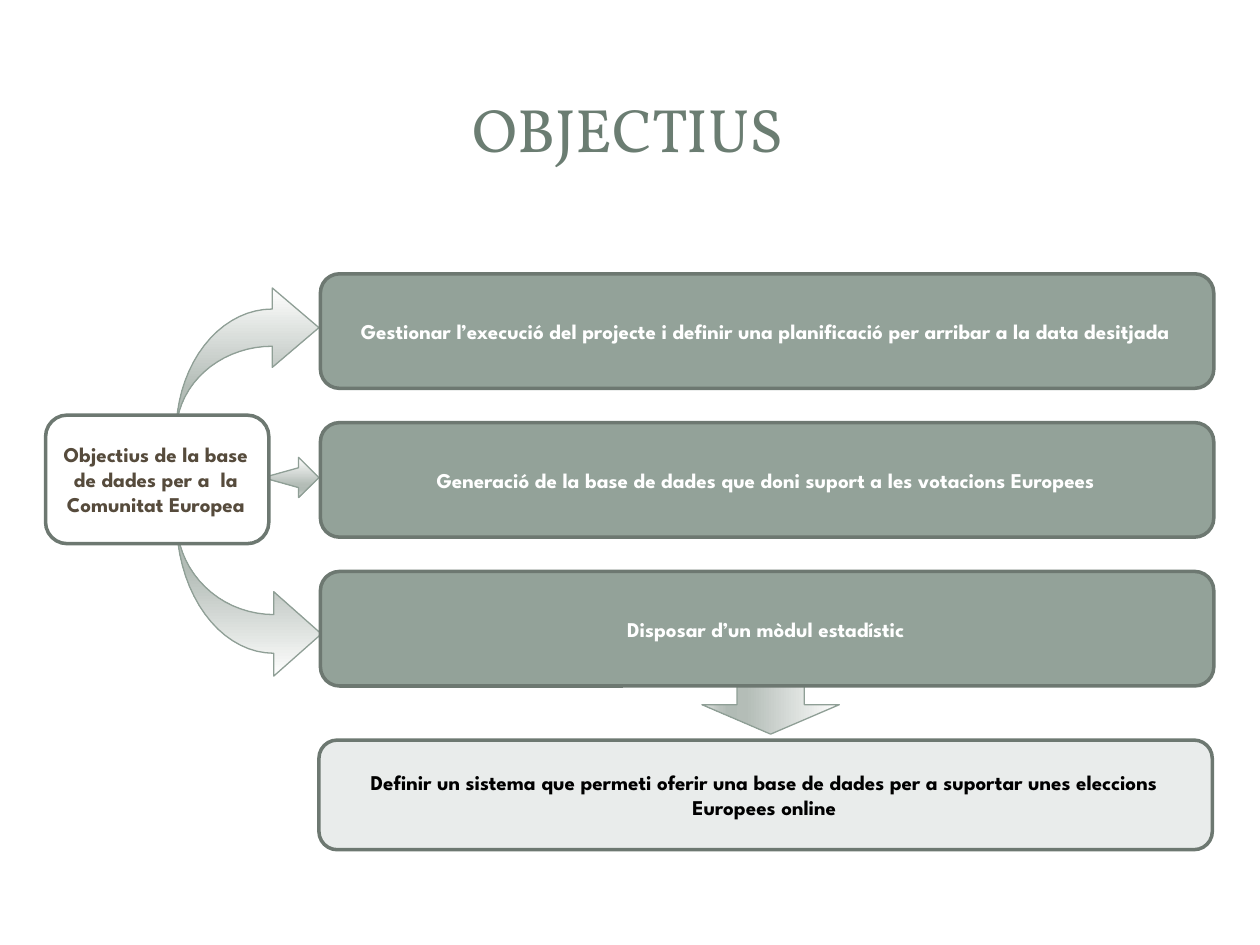
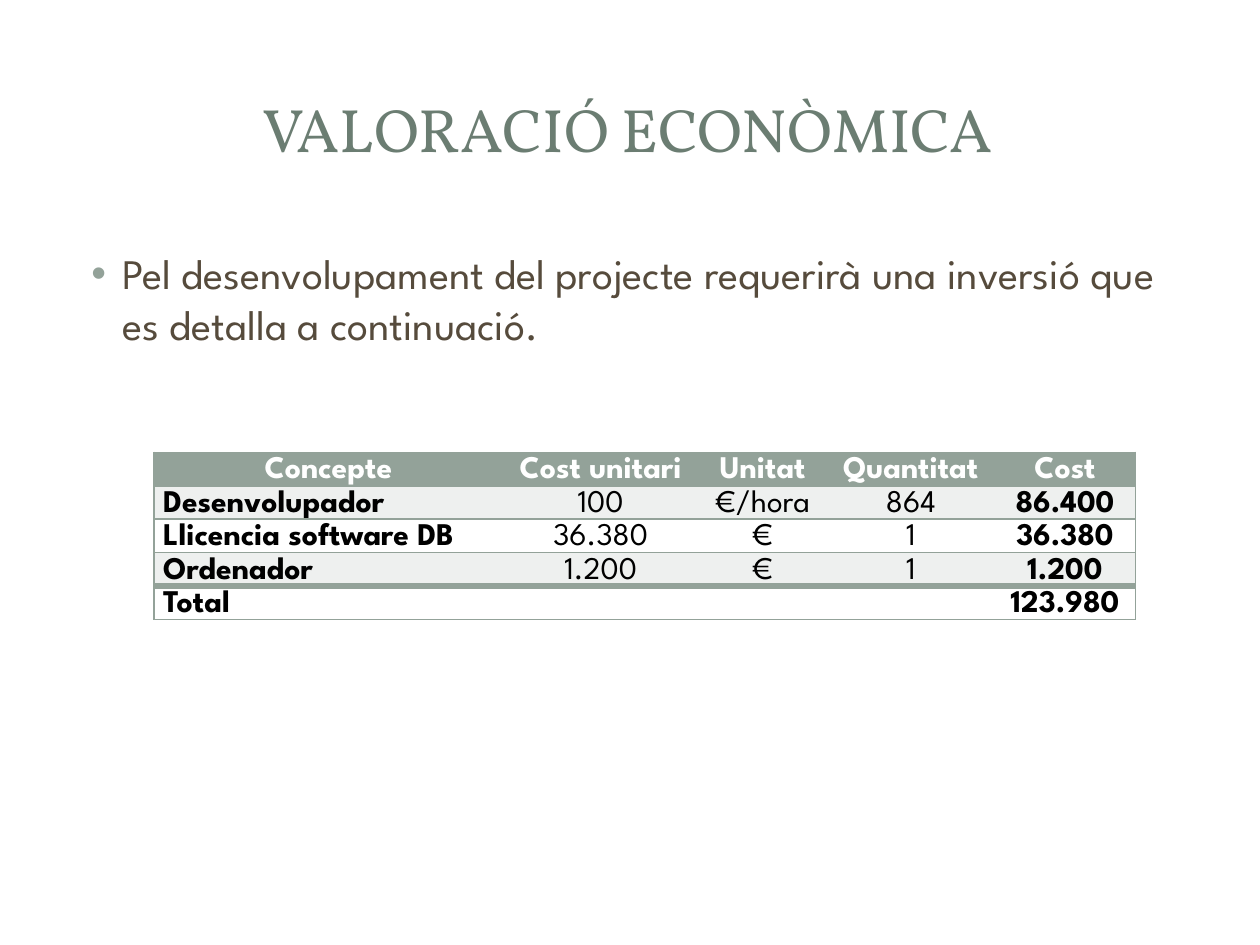
"""Build two slides: the goals of the project and its cost estimate."""
from dataclasses import dataclass
from math import cos, pi, sin

from lxml import etree
from pptx import Presentation
from pptx.dml.color import RGBColor
from pptx.enum.shapes import MSO_SHAPE
from pptx.enum.text import MSO_ANCHOR, PP_ALIGN
from pptx.oxml.ns import qn
from pptx.util import Cm, Pt

ROUNDED = MSO_SHAPE.ROUNDED_RECTANGLE
RECTANGLE = MSO_SHAPE.RECTANGLE
RIGHT_ARROW = MSO_SHAPE.RIGHT_ARROW
MIDDLE = MSO_ANCHOR.MIDDLE
CENTER = PP_ALIGN.CENTER
LEFT = PP_ALIGN.LEFT
JUSTIFY = PP_ALIGN.JUSTIFY

WHITE = RGBColor(0xFF, 0xFF, 0xFF)
BLACK = RGBColor(0x00, 0x00, 0x00)
SAGE = RGBColor(0x93, 0xA2, 0x99)
SAGE_EDGE = RGBColor(0x6D, 0x78, 0x71)
SAGE_PALE = RGBColor(0xE9, 0xEC, 0xEB)
SAGE_BAND = RGBColor(0xEE, 0xF0, 0xEF)
ARROW_EDGE = RGBColor(0x8F, 0x9F, 0x96)
TITLE_GREEN = RGBColor(0x6B, 0x7D, 0x72)
BROWN = RGBColor(0x56, 0x4B, 0x3C)
ARROW_STOPS = ((0, RGBColor(0xFE, 0xFE, 0xFE)), (68, RGBColor(0xB4, 0xBD, 0xB7)),
               (81, RGBColor(0xB1, 0xBB, 0xB5)), (86, RGBColor(0xB9, 0xC1, 0xBC)),
               (100, RGBColor(0xE1, 0xE4, 0xE2)))

TITLE_FONT, TEXT_FONT = "Vollkorn", "League Spartan"
TITLE_ONLY_LAYOUT, CONTENT_LAYOUT = 5, 1
ARC_STEPS = 18
Area = tuple[float, float, float, float]


@dataclass
class Panel:
    """A plain white background panel; area in centimetres, opacity in percent."""
    kind: int
    area: Area
    opacity: int


@dataclass
class Card:
    """A rounded box with bold text; area in centimetres."""
    text: str
    area: Area
    fill: RGBColor
    color: RGBColor


@dataclass
class CurvedArrow:
    """A quarter-turn arrow in centimetres; negative radii turn upwards."""
    start_x: float
    start_y: float
    neck_x: float
    tip_x: float
    outer: float
    inner: float
    head: float


PANELS = (Panel(ROUNDED, (0.25, 0.28, 24.89, 18.52), 100),
          Panel(RECTANGLE, (0.76, 0.76, 23.88, 3.68), 83),
          Panel(RECTANGLE, (1.04, 1.04, 23.29, 3.1), 100))
OBJECTIVES = (
    "Gestionar l’execució del projecte i definir una planificació per arribar a la data desitjada",
    "Generació de la base de dades que doni suport a les votacions Europees",
    "Disposar d’un mòdul estadístic",
)
CARDS = [
    Card("Objectius de la base de dades per a  la Comunitat Europea",
         (0.92, 8.37, 4.5, 2.59), WHITE, BROWN),
    Card("Definir un sistema que permeti oferir una base de dades per a suportar "
         "unes eleccions Europees online", (6.43, 14.92, 18.01, 2.21), SAGE_PALE, BLACK),
] + [Card(text, (6.46, 5.52 + 3 * index, 18.01, 2.31), SAGE, WHITE)
     for index, text in enumerate(OBJECTIVES)]

CURVED_ARROWS = (CurvedArrow(3.56, 10.48, 5.52, 6.48, 2.69, 1.91, 0.85),
                 CurvedArrow(3.55, 8.74, 5.49, 6.43, -2.51, -1.76, -0.8))
STRAIGHT_ARROW = ((5.41, 9.6), (6.02, 9.43), (6.02, 9.22), (6.43, 9.63),
                  (6.02, 10.03), (6.02, 9.83), (5.41, 9.66))

COSTS = (
    ("Concepte", "Cost unitari", "Unitat", "Quantitat", "Cost"),
    ("Desenvolupador", "100", "€/hora", "864", "86.400"),
    ("Llicencia software DB", "36.380", "€", "1", "36.380"),
    ("Ordenador", "1.200", "€", "1", "1.200"),
    ("Total", "", "", "", "123.980"),
)
ROW_FILLS = (SAGE, SAGE_BAND, WHITE, SAGE_BAND, WHITE)
COLUMN_WIDTHS = (7.04, 3.94, 2.59, 3.38, 2.84)
ROW_HEIGHT = 0.67


def place(shape, area: Area) -> None:
    """Move and size a shape in centimetres."""
    shape.left, shape.top, shape.width, shape.height = map(Cm, area)


def format_para(para, size: float, color: RGBColor, align, bold: bool = False,
                font: str = TEXT_FONT) -> None:
    """Format a paragraph and its runs."""
    para.alignment = align
    for span in para.runs:
        span.font.name = font
        span.font.size = Pt(size)
        span.font.bold = bold
        span.font.color.rgb = color


def add_box(page, kind: int, area: Area, fill: RGBColor):
    """Draw a flat filled shape without an outline."""
    box = page.shapes.add_shape(kind, *map(Cm, area))
    box.shadow.inherit = False
    box.fill.solid()
    box.fill.fore_color.rgb = fill
    box.line.fill.background()
    return box


def add_panels(page) -> None:
    """Draw the shared background panels behind everything else."""
    for depth, panel in enumerate(PANELS):
        box = add_box(page, panel.kind, panel.area, WHITE)
        if panel.kind == ROUNDED:
            box.adjustments[0] = 0.02
        if panel.opacity < 100:
            color = box._element.spPr.find(qn("a:solidFill"))[0]
            etree.SubElement(color, qn("a:alpha"), val=str(panel.opacity * 1000))
        page.shapes._spTree.insert(2 + depth, box._element)


def add_page(deck, layout: int, title: str):
    """Add a slide with the shared panels and title style."""
    page = deck.slides.add_slide(deck.slide_layouts[layout])
    add_panels(page)
    box = page.shapes.title
    place(box, (1.19, 1.14, 22.94, 2.9))
    box.text_frame.text = title
    box.text_frame.vertical_anchor = MIDDLE
    format_para(box.text_frame.paragraphs[0], 35, TITLE_GREEN, CENTER, font=TITLE_FONT)
    return page


def style_arrow(shape, angle: int) -> None:
    """Give an arrow its thin outline and gradient, angle clockwise in degrees."""
    shape.shadow.inherit = False
    shape.line.color.rgb = ARROW_EDGE
    shape.line.width = Pt(0.75)
    shape.fill.gradient()
    gradient = shape._element.spPr.find(qn("a:gradFill"))
    gradient.clear()
    stops = etree.SubElement(gradient, qn("a:gsLst"))
    for position, color in ARROW_STOPS:
        stop = etree.SubElement(stops, qn("a:gs"), pos=str(position * 1000))
        etree.SubElement(stop, qn("a:srgbClr"), val=str(color))
    etree.SubElement(gradient, qn("a:lin"), ang=str(angle * 60000), scaled="0")


def add_outline_arrow(page, points, angle: int) -> None:
    """Draw a closed arrow outline through points in centimetres."""
    corners = [(Cm(x), Cm(y)) for x, y in points]
    builder = page.shapes.build_freeform(*corners[0])
    builder.add_line_segments(corners[1:], close=True)
    style_arrow(builder.convert_to_shape(), angle)


def add_curved_arrow(page, arrow: CurvedArrow) -> None:
    """Draw a curved arrow between two quarter ellipses."""
    turns = [pi / 2 * step / ARC_STEPS for step in range(ARC_STEPS + 1)]
    reach_x = arrow.neck_x - arrow.start_x
    outer, inner = ([(arrow.neck_x - reach_x * cos(turn), arrow.start_y + radius * sin(turn))
                     for turn in turns] for radius in (arrow.outer, arrow.inner))
    tip_y = arrow.start_y + (arrow.outer + arrow.inner) / 2
    head = [(arrow.neck_x, tip_y + arrow.head), (arrow.tip_x, tip_y),
            (arrow.neck_x, tip_y - arrow.head)]
    add_outline_arrow(page, outer + head + inner[:0:-1], 90 if arrow.outer < 0 else 270)


def add_card(page, card: Card) -> None:
    """Draw a rounded box with centred bold text."""
    box = add_box(page, ROUNDED, card.area, card.fill)
    box.line.color.rgb = SAGE_EDGE
    box.line.width = Pt(2)
    frame = box.text_frame
    frame.text = card.text
    frame.vertical_anchor = MIDDLE
    frame.margin_left = Cm(0.2)
    frame.margin_right = Cm(0.25)
    frame.paragraphs[0].space_before = Pt(2.4)
    format_para(frame.paragraphs[0], 12, card.color, CENTER, bold=True)


def add_bullet(para) -> None:
    """Give a paragraph a hanging sage bullet."""
    properties = para._p.get_or_add_pPr()
    properties.set("marL", str(Cm(0.95)))
    properties.set("indent", str(-Cm(0.63)))
    color = etree.SubElement(properties, qn("a:buClr"))
    etree.SubElement(color, qn("a:srgbClr"), val=str(SAGE))
    etree.SubElement(properties, qn("a:buFont"), typeface="Arial")
    etree.SubElement(properties, qn("a:buChar"), char="•")


def set_borders(cell, *widths: int) -> None:
    """Set left, right, top and bottom border widths in points, zero for none."""
    properties = cell._tc.get_or_add_tcPr()
    for side, width in zip("LRTB", widths):
        line = etree.SubElement(properties, qn(f"a:ln{side}"), w=str(Pt(width)))
        paint = etree.SubElement(line, qn("a:solidFill" if width else "a:noFill"))
        if width:
            etree.SubElement(paint, qn("a:srgbClr"), val=str(SAGE))


def fill_cell(cell, text: str, row: int, column: int) -> None:
    """Write and format one cell of the cost table."""
    last_row, last_column = len(COSTS) - 1, len(COLUMN_WIDTHS) - 1
    set_borders(cell, int(column == 0), int(column == last_column),
                4 if row == last_row else 1, 4 if row == last_row - 1 else 1)
    cell.fill.solid()
    cell.fill.fore_color.rgb = ROW_FILLS[row]
    cell.margin_left = cell.margin_right = Cm(0.19)
    cell.margin_top = cell.margin_bottom = 0
    cell.vertical_anchor = MIDDLE
    cell.text_frame.text = text
    para = cell.text_frame.paragraphs[0]
    if not text:
        etree.SubElement(para._p, qn("a:endParaRPr"), sz="1000")
        return
    para.line_spacing = 1.15
    format_para(para, 18, BLACK if row else WHITE, JUSTIFY if row and column == 0 else CENTER,
                bold=row == 0 or column in (0, last_column))


def add_cost_table(page) -> None:
    """Draw the cost table."""
    area = (3.1, 9.12, sum(COLUMN_WIDTHS), ROW_HEIGHT * len(COSTS))
    table = page.shapes.add_table(len(COSTS), len(COLUMN_WIDTHS), *map(Cm, area)).table
    for column, width in zip(table.columns, COLUMN_WIDTHS):
        column.width = Cm(width)
    for row, texts in enumerate(COSTS):
        table.rows[row].height = Cm(ROW_HEIGHT)
        for column, text in enumerate(texts):
            fill_cell(table.cell(row, column), text, row, column)


def build_objectives(deck) -> None:
    """Build the slide with the goals."""
    page = add_page(deck, TITLE_ONLY_LAYOUT, "OBJECTIUS")
    add_outline_arrow(page, STRAIGHT_ARROW, 90)
    for arrow in CURVED_ARROWS:
        add_curved_arrow(page, arrow)
    result_arrow = add_box(page, RIGHT_ARROW, (15.04, 12.92, 0.99, 2.77), WHITE)
    result_arrow.rotation = 90
    result_arrow.adjustments[0] = 0.49
    result_arrow.adjustments[1] = 0.6
    style_arrow(result_arrow, 90)
    for card in CARDS:
        add_card(page, card)


def build_costs(deck) -> None:
    """Build the slide with the cost estimate."""
    page = add_page(deck, CONTENT_LAYOUT, "VALORACIÓ ECONÒMICA")
    body = page.placeholders[1]
    place(body, (1.27, 4.87, 22.86, 12.14))
    body.text_frame.text = ("Pel desenvolupament del projecte requerirà una inversió "
                            "que es detalla a continuació.")
    para = body.text_frame.paragraphs[0]
    add_bullet(para)
    para.space_before = Pt(4.8)
    format_para(para, 24, BROWN, LEFT)
    add_cost_table(page)


def main() -> None:
    """Build and save the deck."""
    deck = Presentation()
    deck.slide_width, deck.slide_height = Cm(25.4), Cm(19.05)
    build_objectives(deck)
    build_costs(deck)
    deck.save("out.pptx")


if __name__ == "__main__":
    main()
